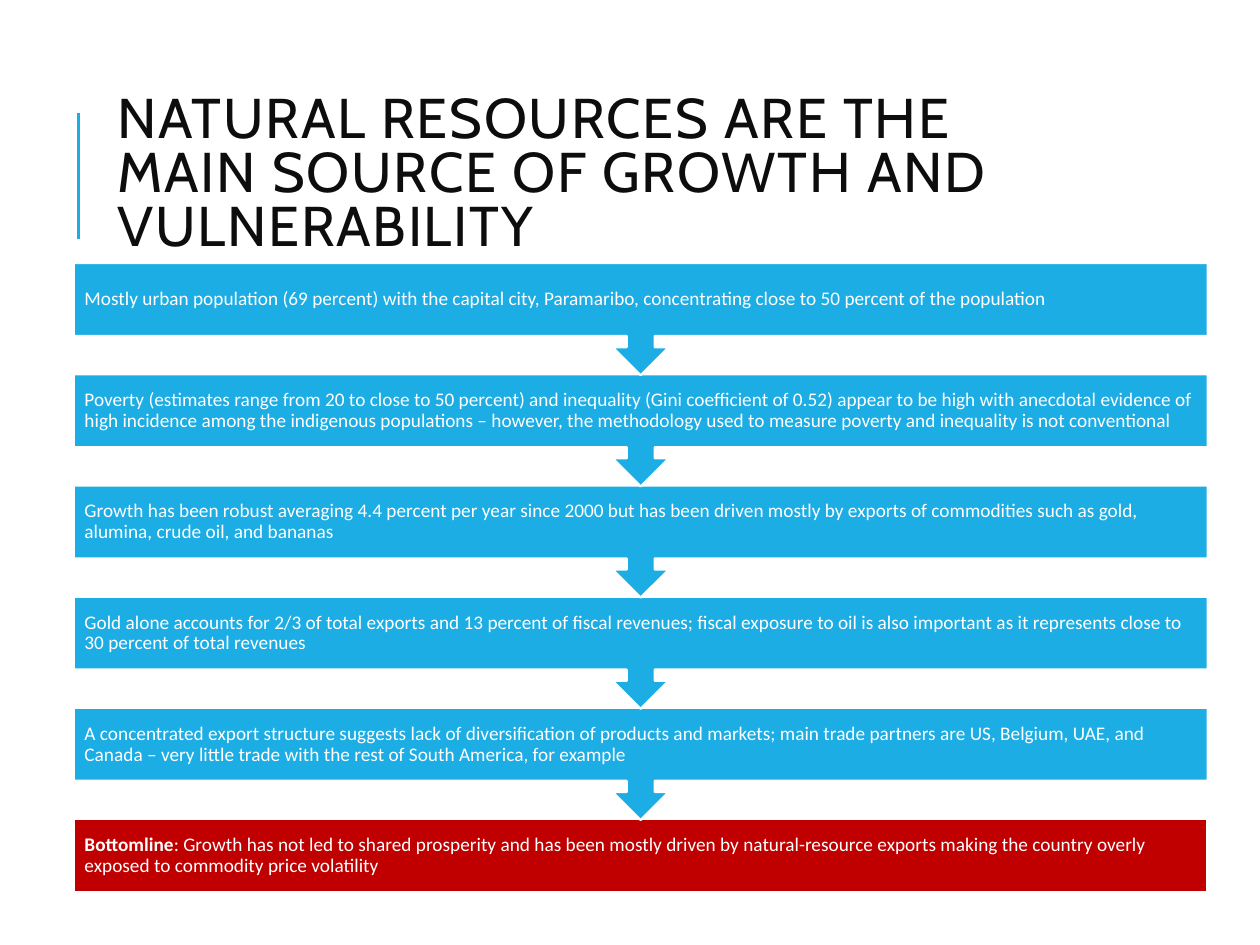
from dataclasses import dataclass

from lxml import etree
from pptx import Presentation
from pptx.dml.color import RGBColor
from pptx.enum.shapes import MSO_CONNECTOR as Link, MSO_SHAPE as Kind
from pptx.enum.text import MSO_ANCHOR as Anchor, PP_ALIGN as Align
from pptx.oxml.ns import qn
from pptx.util import Pt

BLUE = RGBColor(0x1C, 0xAD, 0xE4)
RED = RGBColor(0xC0, 0x00, 0x00)
WHITE = RGBColor(0xFF, 0xFF, 0xFF)
INK = RGBColor(0x0D, 0x0D, 0x0D)

# Chain of steps, in points
LEFT, TOP, WIDTH = 42.1, 150.3, 648
PITCH, TALL, BODY = 63.55, 64.1, 41.7
INSET = 6.2


@dataclass
class Step:
    text: str
    lead: str = ""
    last: bool = False


STEPS = [
    Step("Mostly urban population (69 percent) with the capital city, Paramaribo, "
         "concentrating close to 50 percent of the population"),
    Step("Poverty (estimates range from 20 to close to 50 percent) and inequality "
         "(Gini coefficient of 0.52) appear to be high with anecdotal evidence of high "
         "incidence among the indigenous populations – however, the methodology used to "
         "measure poverty and inequality is not conventional"),
    Step("Growth has been robust averaging 4.4 percent per year since 2000 but has been "
         "driven mostly by exports of commodities such as gold, alumina, crude oil, "
         "and bananas"),
    Step("Gold alone accounts for 2/3 of total exports and 13 percent of fiscal revenues; "
         "fiscal exposure to oil is also important as it represents close to 30 percent "
         "of total revenues"),
    Step("A concentrated export structure suggests lack of diversification of products "
         "and markets; main trade partners are US, Belgium, UAE, and Canada – very little "
         "trade with the rest of South America, for example"),
    Step(": Growth has not led to shared prosperity and has been mostly driven by "
         "natural-resource exports making the country overly exposed to commodity price "
         "volatility", lead="Bottomline", last=True),
]


def add_text(slide, box: tuple, text: str, font: str, size: float,
             color: RGBColor, gap: float, lead: str = ""):
    """Add a wrapped, middle-anchored text box and return its frame."""
    frame = slide.shapes.add_textbox(*(Pt(v) for v in box)).text_frame
    frame.word_wrap = True
    frame.vertical_anchor = Anchor.MIDDLE
    para = frame.paragraphs[0]
    para.text = lead or text
    if lead:
        para.add_run().text = text
    para.alignment = Align.LEFT
    para.line_spacing = gap
    for run in para.runs:
        run.font.name = font
        run.font.size = Pt(size)
        run.font.color.rgb = color
        run.font.bold = run.text == lead
    return frame


def add_step(slide, step: Step, top: float) -> None:
    """Draw one bar, with its arrow unless it is the last, and its text."""
    kind = Kind.RECTANGLE if step.last else Kind.UP_ARROW_CALLOUT
    tall = BODY if step.last else TALL
    bar = slide.shapes.add_shape(kind, Pt(LEFT), Pt(top), Pt(WIDTH), Pt(tall))
    bar.rotation = 0 if step.last else 180
    bar.shadow.inherit = False
    bar.fill.solid()
    bar.fill.fore_color.rgb = RED if step.last else BLUE
    bar.line.color.rgb = WHITE
    bar.line.width = Pt(1.25)

    frame = add_text(slide, (LEFT, top, WIDTH, BODY), step.text,
                     "Calibri", 11, WHITE, 0.9, step.lead)
    frame.margin_left = frame.margin_right = Pt(INSET)
    frame.margin_top = frame.margin_bottom = Pt(INSET)


def add_rule(slide) -> None:
    """Draw the accent line beside the title."""
    rule = slide.shapes.add_connector(Link.STRAIGHT, Pt(44.8), Pt(136.8), Pt(44.8), Pt(64.8))
    rule.line.color.rgb = BLUE
    rule.line.width = Pt(1.5)
    etree.SubElement(rule.line._get_or_add_ln().getparent(), qn("a:effectLst"))


def main() -> None:
    deck = Presentation()
    deck.slide_width, deck.slide_height = Pt(720), Pt(540)
    slide = deck.slides.add_slide(deck.slide_layouts[6])

    # Title with letter spacing of one point
    add_rule(slide)
    title = add_text(slide, (60, 41.8, 574, 118),
                     "NATURAL RESOURCES ARE THE MAIN SOURCE OF GROWTH AND VULNERABILITY",
                     "Cabin", 32, INK, 0.8)
    title.paragraphs[0].runs[0].font._element.set("spc", "100")

    # Steps, lowest first so that each arrow lies over the next bar
    for row, step in reversed(list(enumerate(STEPS))):
        add_step(slide, step, TOP + row * PITCH)

    deck.save("out.pptx")


if __name__ == "__main__":
    main()
